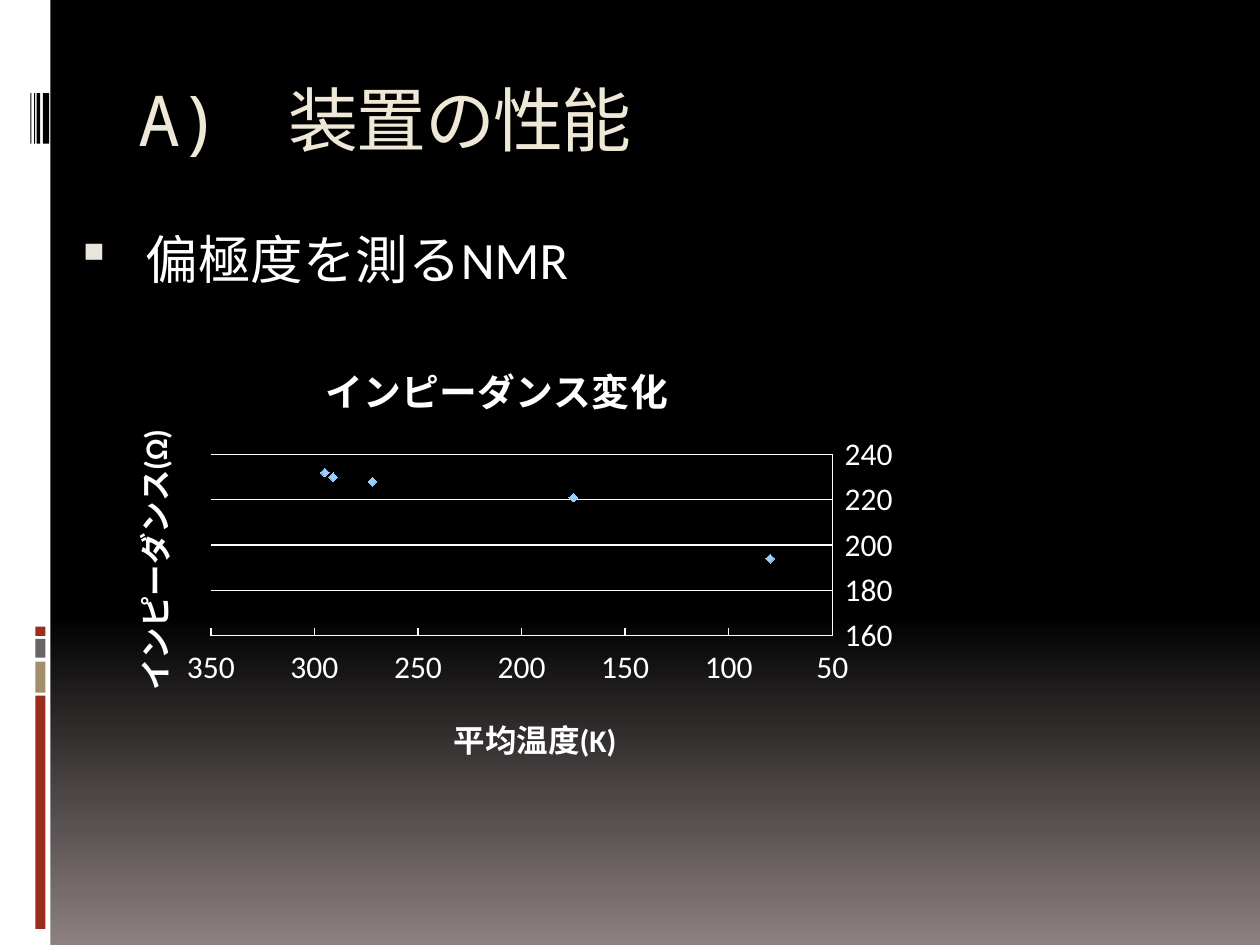
import copy

import pptx
import pptx.chart.data
import pptx.dml.color
import pptx.enum.chart
import pptx.enum.shapes
import pptx.enum.text
import pptx.oxml
import pptx.oxml.ns
import pptx.util

RGB = pptx.dml.color.RGBColor
BLACK = RGB(0x00, 0x00, 0x00)
WHITE = RGB(0xFF, 0xFF, 0xFF)
MAUVE = RGB(0x8C, 0x80, 0x80)
RED = RGB(0x9B, 0x2D, 0x1F)
TAN = RGB(0xA2, 0x8E, 0x6A)
GRAY = RGB(0x69, 0x64, 0x64)
CREAM = RGB(0xEF, 0xE8, 0xD6)
BULLET = RGB(0xE9, 0xE5, 0xDC)
SKY = RGB(0x99, 0xCC, 0xFF)

WIDTH, HEIGHT = 10, 7.5
READINGS = [(295, 232), (291, 230), (272, 228), (175, 221), (80, 194)]


def inches(*lengths):
    return [pptx.util.Inches(length) for length in lengths]


def paint_background(page):
    fill = page.background.fill
    fill.gradient()
    fill.gradient_angle = 270
    stops = fill.gradient_stops
    first = stops[0]._gs
    first.addnext(copy.deepcopy(first))
    for stop, (position, color) in zip(
        fill.gradient_stops, [(0, BLACK), (0.65, BLACK), (1, MAUVE)]
    ):
        stop.position = position
        stop.color.rgb = color


def add_bar(page, box, color):
    bar = page.shapes.add_shape(
        pptx.enum.shapes.MSO_SHAPE.RECTANGLE, *inches(*box))
    bar.shadow.inherit = False
    bar.fill.solid()
    bar.fill.fore_color.rgb = color
    bar.line.fill.background()


def add_side_strip(page, box):
    left, top, width, height = box
    add_bar(page, box, WHITE)
    # Coloured blocks, as shares of the strip
    for start, share, color in [
        (0.736, 0.247, RED), (0.7, 0.033, TAN),
        (0.676, 0.02, GRAY), (0.663, 0.01, RED),
    ]:
        add_bar(page, (left + 0.7 * width, top + start * height,
                       0.2 * width, share * height), color)
    # Barcode lines
    for offset, thickness in [(0.34, 0.05), (0.29, 0.03), (0.27, 0.01), (0.24, 0.01)]:
        add_bar(page, (left + offset, top + 0.74, thickness, 0.4), BLACK)


def add_text(page, box, text, size, font, color):
    frame = page.shapes.add_textbox(*inches(*box)).text_frame
    frame.word_wrap = True
    frame.vertical_anchor = pptx.enum.text.MSO_ANCHOR.TOP
    para = frame.paragraphs[0]
    span = para.add_run()
    span.text = text
    span.font.size = pptx.util.Pt(size)
    span.font.name = font
    span.font.color.rgb = color
    return para, span


def add_title(page, box):
    span = add_text(page, box, "A)　装置の性能", 40, "Noto Sans Mono", CREAM)[1]
    properties = span._r.get_or_add_rPr()
    properties.set("spc", "-100")
    east_asian = properties.makeelement(
        pptx.oxml.ns.qn("a:ea"), {"typeface": "Noto Sans Mono"})
    properties.find(pptx.oxml.ns.qn("a:latin")).addnext(east_asian)


def add_body(page, box):
    para = add_text(page, box, "偏極度を測るNMR", 30, "Calibri", WHITE)[0]
    para.space_before = pptx.util.Pt(7)
    properties = para._p.get_or_add_pPr()
    indent = pptx.util.Inches(0.56)
    properties.set("marL", str(indent))
    properties.set("indent", str(-indent))
    namespace = pptx.oxml.ns.nsdecls("a")
    for xml in [
        f'<a:buClr {namespace}><a:srgbClr val="{BULLET}"/></a:buClr>',
        f'<a:buSzPct {namespace} val="95000"/>',
        f'<a:buChar {namespace} char="▪"/>',
    ]:
        properties.append(pptx.oxml.parse_xml(xml))


def layout_xml(inner=False, **shares):
    """A manual chart layout in shares of the chart's box."""
    target = '<c:layoutTarget val="inner"/>' if inner else ""
    modes = '<c:xMode val="edge"/><c:yMode val="edge"/>'
    values = "".join(f'<c:{key} val="{share}"/>' for key, share in shares.items())
    return pptx.oxml.parse_xml(
        f'<c:layout {pptx.oxml.ns.nsdecls("c")}><c:manualLayout>'
        f"{target}{modes}{values}</c:manualLayout></c:layout>")


def drop_layout(element):
    for old in element.findall(pptx.oxml.ns.qn("c:layout")):
        element.remove(old)


def write_chart_title(title, text, size):
    span = title.text_frame.paragraphs[0].add_run()
    span.text = text
    span.font.size = pptx.util.Pt(size)
    span.font.bold = True
    span.font.name = "Calibri"
    span.font.color.rgb = WHITE


def style_axis(axis, text, low, high, step, tick, x, y):
    axis.minimum_scale, axis.maximum_scale, axis.major_unit = low, high, step
    axis.major_tick_mark = tick
    axis.minor_tick_mark = pptx.enum.chart.XL_TICK_MARK.NONE
    axis.tick_label_position = pptx.enum.chart.XL_TICK_LABEL_POSITION.LOW
    axis.tick_labels.number_format = "General"
    axis.tick_labels.number_format_is_linked = False
    axis.format.line.color.rgb = WHITE
    write_chart_title(axis.axis_title, text, 18)
    element = axis.axis_title._element
    drop_layout(element)
    element.find(pptx.oxml.ns.qn("c:tx")).addnext(layout_xml(x=x, y=y))


def add_impedance_chart(page, box):
    data = pptx.chart.data.XyChartData()
    series_data = data.add_series("Series 1")
    for temperature, impedance in READINGS:
        series_data.add_data_point(temperature, impedance)
    chart = page.shapes.add_chart(
        pptx.enum.chart.XL_CHART_TYPE.XY_SCATTER, *inches(*box), data).chart
    chart.has_legend = False
    chart.font.size = pptx.util.Pt(18)
    chart.font.name = "Calibri"
    chart.font.color.rgb = WHITE
    write_chart_title(chart.chart_title, "インピーダンス変化", 21.6)

    # Axes
    ticks = pptx.enum.chart.XL_TICK_MARK
    across, up = chart.category_axis, chart.value_axis
    style_axis(across, "平均温度(K)", 50, 350, 50, ticks.INSIDE, 0.44, 0.84)
    style_axis(up, "インピーダンス(Ω)", 160, 240, 20, ticks.NONE, 0.04, 0.2)
    across.reverse_order = True
    across.has_major_gridlines = False
    up.has_major_gridlines = True
    up.major_gridlines.format.line.color.rgb = WHITE

    # Plot area and markers
    plot = chart.plots[0]
    plot.vary_by_categories = False
    area = plot._element.getparent()
    drop_layout(area)
    area.insert(0, layout_xml(inner=True, x=0.15, y=0.27, w=0.76, h=0.41))
    series = plot.series[0]
    series.smooth = False
    series.format.line.fill.background()
    marker = series.marker
    marker.style = pptx.enum.chart.XL_MARKER_STYLE.DIAMOND
    marker.size = 5
    marker.format.fill.solid()
    marker.format.fill.fore_color.rgb = SKY
    marker.format.line.color.rgb = SKY


def main():
    deck = pptx.Presentation()
    deck.slide_width, deck.slide_height = inches(WIDTH, HEIGHT)
    page = deck.slides.add_slide(deck.slide_layouts[6])
    paint_background(page)
    add_side_strip(page, (0, 0, 0.04 * WIDTH, HEIGHT))
    add_title(page, (1, 0.56, 8.5, 1))
    add_body(page, (0.5, 1.75, 9.34, 4.95))
    add_impedance_chart(page, (0.7, 2.66, 6.49, 3.51))
    deck.save("out.pptx")


if __name__ == "__main__":
    main()
